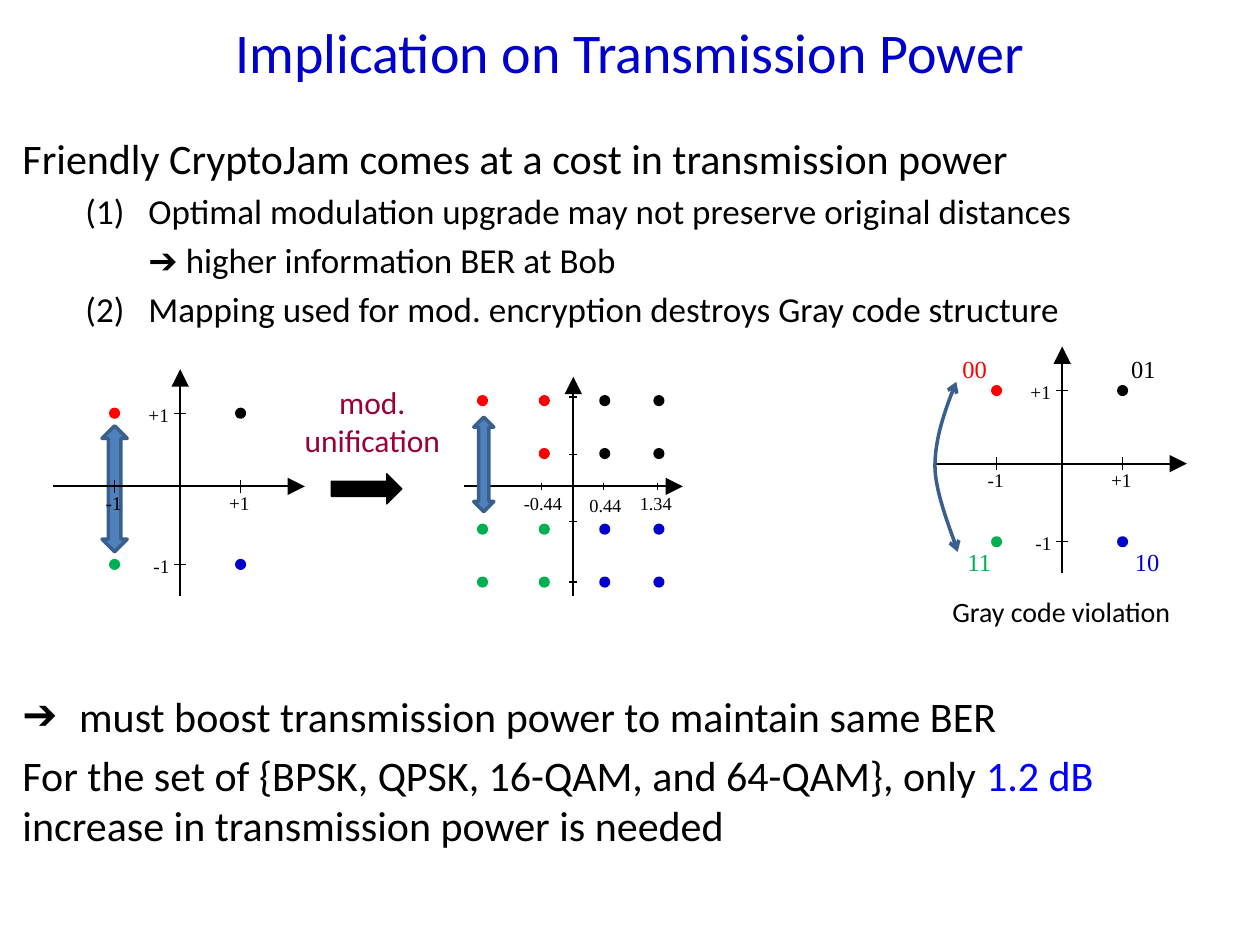
from itertools import product

from lxml import etree
from pptx import Presentation
from pptx.dml.color import RGBColor
from pptx.enum.shapes import MSO_CONNECTOR as Connector, MSO_SHAPE as Shape
from pptx.enum.text import MSO_ANCHOR as Anchor, PP_ALIGN as Align
from pptx.oxml.ns import qn
from pptx.util import Inches, Pt

COLORS = {
    "title": "0000CC", "text": "000000", "accent": "0000FF", "wine": "990033",
    "red": "FF0000", "green": "00B050", "blue": "0000CC",
    "arrow": "4F81BD", "arrow_edge": "3A5F8C",
}
SANS, SERIF = "Calibri", "Times New Roman"
QUADRANTS = {(0, 0): "red", (1, 0): "text", (0, 1): "green", (1, 1): "blue"}


def rgb(name):
    """Return the named colour."""
    return RGBColor.from_string(COLORS[name])


def add_text(shapes, box, paragraphs, size, color="text", font=SANS, align=None, wrap=True):
    """Add a text box and return its paragraphs."""
    frame = shapes.add_textbox(*map(Inches, box)).text_frame
    frame.word_wrap = wrap
    frame.text = "\n".join(paragraphs)
    for para in frame.paragraphs:
        para.alignment = align
        for span in para.runs:
            span.font.name, span.font.size = font, Pt(size)
            span.font.color.rgb = rgb(color)
    return frame.paragraphs


def set_indent(para, margin, hanging=0, bullet=None, **attributes):
    """Set the left margin of a paragraph and, if given, its bullet."""
    props = para._p.get_or_add_pPr()
    props.set("marL", str(Inches(margin)))
    props.set("indent", str(-Inches(hanging)))
    if bullet:
        etree.SubElement(props, qn("a:buFont"), typeface=SANS)
        etree.SubElement(props, qn(f"a:{bullet}"), attributes)


def add_solid(shapes, kind, box, fill, edge, width):
    """Add a filled preset shape."""
    shape = shapes.add_shape(kind, *map(Inches, box))
    shape.shadow.inherit = False
    shape.fill.solid()
    shape.fill.fore_color.rgb = rgb(fill)
    shape.line.color.rgb = rgb(edge)
    shape.line.width = Pt(width)


def add_arrowhead(shape, end, kind, size):
    """Put an arrowhead on one end of a line."""
    etree.SubElement(shape.line._get_or_add_ln(), qn(f"a:{end}"), type=kind, w=size, len=size)


def add_line(shapes, start, stop, width):
    """Add a straight black line."""
    line = shapes.add_connector(Connector.STRAIGHT, *map(Inches, start + stop))
    line.line.color.rgb = rgb("text")
    line.line.width = Pt(width)
    etree.SubElement(line._element.spPr, qn("a:effectLst"))
    return line


def add_plane(page, box, origin, dots, ticks, half_tick, labels):
    """Draw a constellation: axes, ticks, coloured dots and labels."""
    left, top, width, height = box
    center_x, center_y = left + origin[0], top + origin[1]
    shapes = page.shapes.add_group_shape().shapes
    for start, stop in (((left, center_y), (left + width, center_y)),
                        ((center_x, top + height), (center_x, top))):
        add_arrowhead(add_line(shapes, start, stop, 1), "tailEnd", "triangle", "lg")
    for x in ticks[0]:
        add_line(shapes, (left + x, center_y - half_tick), (left + x, center_y + half_tick), 0.75)
    for y in ticks[1]:
        add_line(shapes, (center_x - half_tick, top + y), (center_x + half_tick, top + y), 0.75)
    for (i, x), (j, y) in product(enumerate(dots[0]), enumerate(dots[1])):
        color = QUADRANTS[2 * i // len(dots[0]), 2 * j // len(dots[1])]
        add_solid(shapes, Shape.OVAL, (left + x - 0.03, top + y - 0.03, 0.06, 0.06),
                  color, color, 2)
    for text, x, y, w, h, size, color in labels:
        add_text(shapes, (left + x, top + y, w, h), [text], size, color, SERIF, wrap=False)


def add_qpsk(page, left, top, codes=()):
    """Draw a four-point constellation with optional bit codes."""
    points = ((0.49, 1.49), (0.35, 1.55))
    units = [("+1", 1.3, 0.92, 0.37), ("-1", 0.32, 0.92, 0.33),
             ("-1", 0.7, 1.42, 0.33), ("+1", 0.66, 0.22, 0.37)]
    labels = [(*unit, 0.29, 11, "text") for unit in units]
    labels += [(text, x, y, 0.4, 0.34, 14, color) for text, x, y, color in codes]
    add_plane(page, (left, top, 2, 1.8), (1.01, 0.93), points, points, 0.05, labels)


def add_qam(page, left, top):
    """Draw a sixteen-point constellation."""
    dots = ((0.15, 0.64, 1.12, 1.55), (0.19, 0.61, 1.21, 1.63))
    ticks = ((0.14, 0.62, 1.11, 1.54), (0.16, 0.62, 1.15, 1.63))
    labels = [(text, x, y, w, 0.28, 10.5, "text") for text, x, y, w in
              (("-0.44", 0.38, 0.87, 0.52), ("0.44", 0.9, 0.88, 0.46), ("1.34", 1.3, 0.87, 0.46))]
    add_plane(page, (left, top, 1.74, 1.74), (0.87, 0.87), dots, ticks, 0.03, labels)


def bezier(points, steps=12):
    """Sample a cubic curve, leaving out its first point."""
    for step in range(1, steps + 1):
        t = step / steps
        weights = ((1 - t) ** 3, 3 * t * (1 - t) ** 2, 3 * t * t * (1 - t), t ** 3)
        yield tuple(sum(w * p[axis] for w, p in zip(weights, points)) for axis in (0, 1))


def add_violation(page, left, top):
    """Draw the Gray code example with its curved arrow and caption."""
    add_qpsk(page, left, top, (("01", 1.46, 0.01, "text"), ("10", 1.49, 1.54, "blue"),
                               ("11", 0.16, 1.54, "green"), ("00", 0.12, 0.01, "red")))
    curve = [(Inches(left + x), Inches(top + y)) for x, y in (
        (0.17, 0.28), (0.08, 0.5), (0, 0.73), (0, 0.95), (0, 1.18), (0.16, 1.54), (0.18, 1.63))]
    builder = page.shapes.build_freeform(*curve[0])
    builder.add_line_segments([*bezier(curve[:4]), *bezier(curve[3:])], close=False)
    arc = builder.convert_to_shape()
    arc.shadow.inherit = False
    arc.fill.background()
    arc.line.color.rgb = rgb("arrow_edge")
    arc.line.width = Pt(2)
    for end in ("headEnd", "tailEnd"):
        add_arrowhead(arc, end, "arrow", "med")
    add_text(page.shapes, (left + 0.04, top + 1.92, 1.96, 0.37), ["Gray code violation"], 16)


def add_unification(page, left, top):
    """Draw the upgrade from four to sixteen points."""
    add_qam(page, left + 3.26, top + 0.06)
    for box in ((left + 0.39, top + 0.45, 0.2, 1), (left + 3.34, top + 0.38, 0.16, 0.75)):
        add_solid(page.shapes, Shape.UP_DOWN_ARROW, box, "arrow", "arrow_edge", 2)
    add_qpsk(page, left, top)
    add_solid(page.shapes, Shape.RIGHT_ARROW, (left + 2.21, top + 0.83, 0.56, 0.24),
              "text", "text", 0.75)
    add_text(page.shapes, (left + 1.75, top + 0.06, 1.57, 0.71), ["mod.", "unification"],
             18, "wine", align=Align.CENTER)


def add_title(page, box):
    """Place the slide title."""
    add_text(page.shapes, box, ["Implication on Transmission Power"], 32, "title",
             align=Align.CENTER)
    page.shapes[-1].text_frame.vertical_anchor = Anchor.MIDDLE


def add_costs(page, box):
    """Place the opening statement and its numbered reasons."""
    paras = add_text(page.shapes, box, [
        "Friendly CryptoJam comes at a cost in transmission power",
        "Optimal modulation upgrade may not preserve original distances",
        "➔ higher information BER at Bob",
        "Mapping used for mod. encryption destroys Gray code structure"], 20)
    paras[0].runs[0].font.size = Pt(24)
    for para in paras[1:]:
        para.space_before = Pt(4)
    set_indent(paras[2], 1)
    for para, number in ((paras[1], "1"), (paras[3], "2")):
        set_indent(para, 1, 0.5, "buAutoNum", type="arabicParenBoth", startAt=number)


def add_conclusion(page, box):
    """Place the closing statement on power."""
    boost, result = add_text(page.shapes, box, [
        "must boost transmission power to maintain same BER",
        "For the set of {BPSK, QPSK, 16-QAM, and 64-QAM}, only "], 24)
    set_indent(boost, 0.45, 0.45, "buChar", char="➔")
    result.space_before = Pt(4.8)
    for text, color in (("1.2 dB ", "accent"), ("increase in transmission power is needed", "text")):
        span = result.add_run()
        span.text = text
        span.font.name, span.font.size = SANS, Pt(24)
        span.font.color.rgb = rgb(color)


def main():
    """Build and save the deck."""
    deck = Presentation()
    deck.slide_width, deck.slide_height = Inches(10), Inches(7.5)
    page = deck.slides.add_slide(deck.slide_layouts[6])
    add_title(page, (0, 0.08, 10, 0.65))
    add_costs(page, (0.08, 1, 9.75, 1.7))
    add_violation(page, 7.42, 2.75)
    add_unification(page, 0.42, 2.93)
    add_conclusion(page, (0.08, 5.43, 9.75, 1.38))
    deck.save("out.pptx")


if __name__ == "__main__":
    main()
